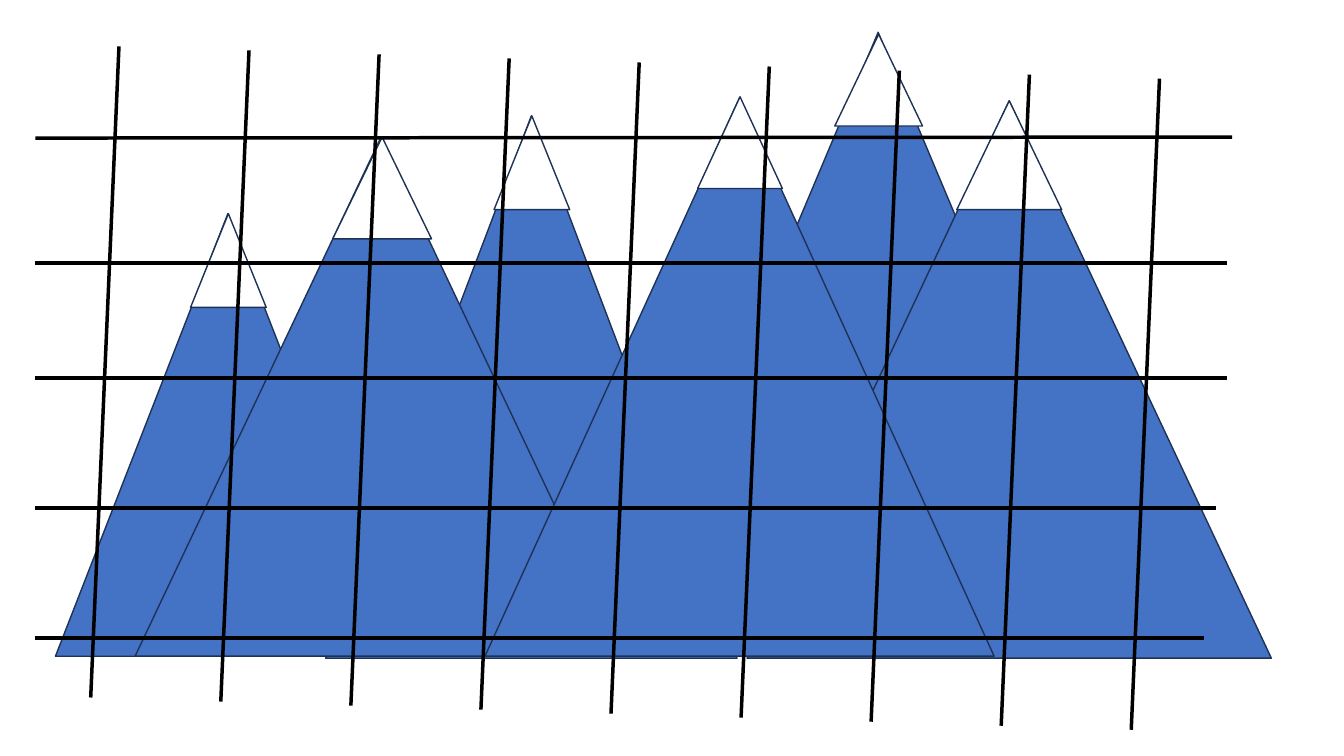
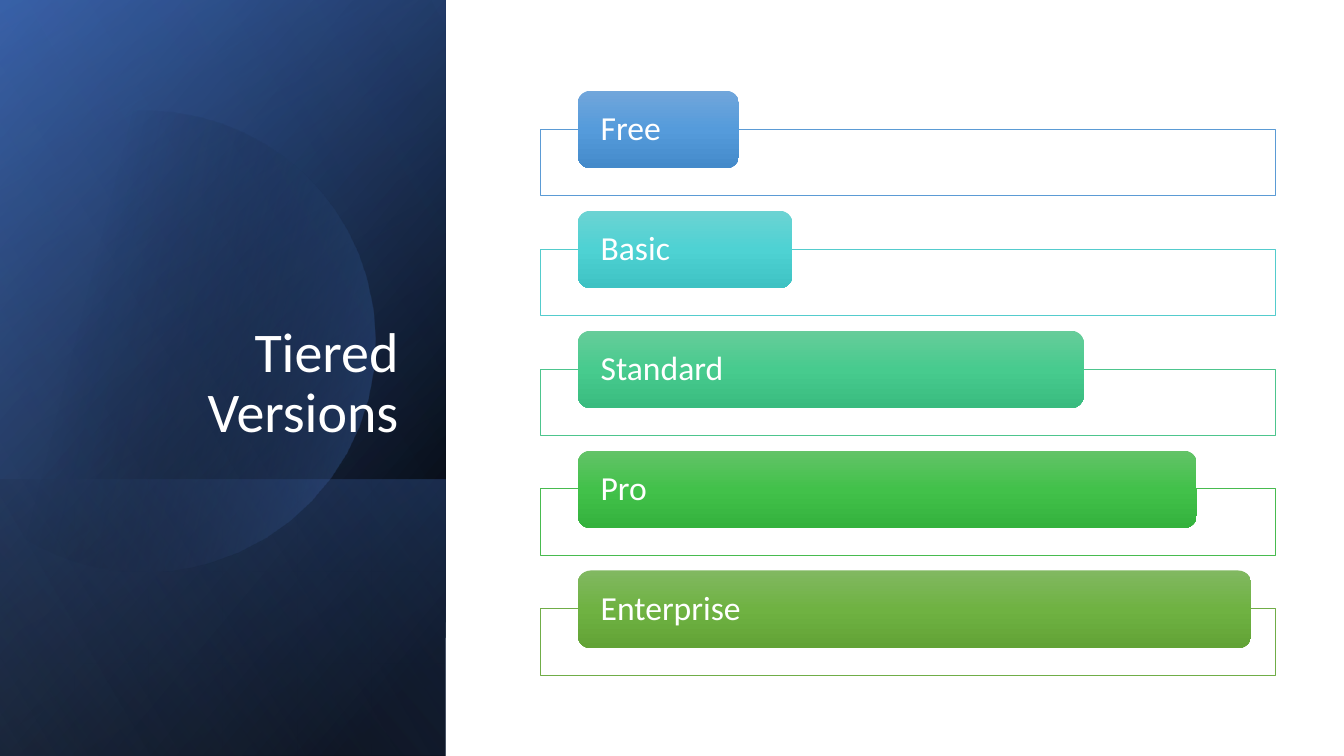
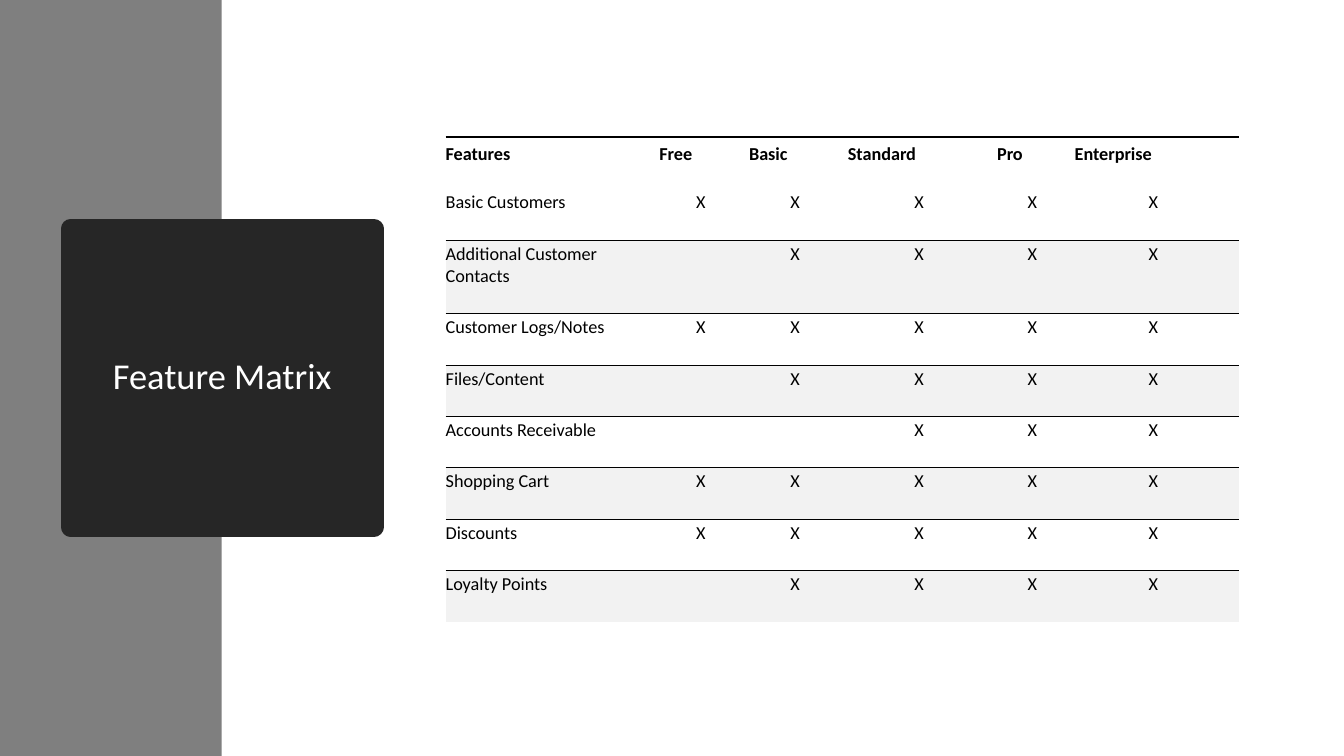
from dataclasses import dataclass
from typing import NamedTuple

from pptx import Presentation
from pptx.dml.color import RGBColor
from pptx.enum.shapes import MSO_CONNECTOR, MSO_SHAPE
from pptx.enum.text import MSO_ANCHOR, PP_ALIGN
from pptx.oxml import parse_xml
from pptx.oxml.ns import nsdecls, qn
from pptx.util import Inches, Pt

TRIANGLE = MSO_SHAPE.ISOSCELES_TRIANGLE
RECTANGLE = MSO_SHAPE.RECTANGLE
ROUNDED = MSO_SHAPE.ROUNDED_RECTANGLE
STRAIGHT = MSO_CONNECTOR.STRAIGHT
LEFT, CENTER, RIGHT = PP_ALIGN.LEFT, PP_ALIGN.CENTER, PP_ALIGN.RIGHT
TOP, MIDDLE, BOTTOM = MSO_ANCHOR.TOP, MSO_ANCHOR.MIDDLE, MSO_ANCHOR.BOTTOM
PLAIN_TABLE = "{2D5ABB26-0587-4C30-8999-92F81FD0307C}"


@dataclass(frozen=True)
class Theme:
    font: str = "Calibri"
    black: str = "000000"
    white: str = "FFFFFF"
    blue: str = "4472C4"
    deep_blue: str = "2F5597"
    pale_blue: str = "8FAADC"
    outline: str = "1E3256"
    gray: str = "7F7F7F"
    charcoal: str = "262626"
    band: str = "F2F2F2"
    title_size: float = 40
    card_title_size: float = 26
    tier_size: float = 24
    table_size: float = 13


THEME = Theme()


class Box(NamedTuple):
    left: float
    top: float
    width: float
    height: float


class Stop(NamedTuple):
    position: int
    color: str
    alpha: int = 100


class Wash(NamedTuple):
    box: Box
    stops: tuple[Stop, ...]
    angle: int


class Tier(NamedTuple):
    name: str
    width: float
    outline: str
    colors: tuple[str, str, str]


class Feature(NamedTuple):
    name: str
    included: str  # one digit per tier, 1 when included


# Content
MOUNTAINS = (
    Box(3.23, 1.15, 4.08, 5.38), Box(6.11, 0.32, 5.2, 6.18), Box(0.55, 2.12, 3.42, 4.39),
    Box(1.34, 1.37, 4.87, 5.14), Box(7.41, 1, 5.2, 5.53), Box(4.81, 0.97, 5.05, 5.54),
)
SNOW_CAPS = (
    Box(1.89, 2.12, 0.75, 0.93), Box(3.3, 1.36, 0.98, 1.01), Box(4.9, 1.15, 0.75, 0.93),
    Box(6.92, 0.96, 0.84, 0.91), Box(8.28, 0.34, 0.87, 0.91), Box(9.49, 1, 1.04, 1.08),
)
# Start height, end width and end height of each row line
GRID_ROWS = ((1.37, 12.22, 1.36), (2.61, 12.17, 2.61), (3.75, 12.17, 3.75),
             (5.04, 12.06, 5.04), (6.33, 11.94, 6.33))
GRID_COLUMNS = 9

PANEL = Box(-1.54, 1.54, 7.5, 4.42)
WASHES_BELOW = (
    Wash(PANEL, (Stop(8, THEME.black), Stop(100, THEME.deep_blue)), 50),
    Wash(PANEL, (Stop(0, THEME.black, 0), Stop(99, THEME.blue, 46)), 30),
    Wash(Box(0.84, 3.92, 2.74, 4.42),
         (Stop(2, THEME.blue, 29), Stop(100, THEME.black, 30)), 130),
)
WASH_ABOVE = Wash(PANEL, (Stop(0, THEME.black, 0), Stop(99, THEME.pale_blue, 11)), 120)
DISC_START = (1.49, 1.1)
DISC_CURVES = (
    ((2.46, 1.12), (3.35, 1.77), (3.63, 2.75)),
    ((3.98, 3.97), (3.28, 5.23), (2.07, 5.58)),
    ((1.31, 5.8), (0.53, 5.61), (-0.03, 5.14)),
    ((-0.15, 5.03), (-0.15, 1.75), (0, 1.61)),
    ((0.23, 1.42), (0.5, 1.28), (0.8, 1.19)),
    ((1.03, 1.13), (1.26, 1.1), (1.49, 1.1)),
)
DISC_EDGE = 3  # the curve that is drawn as straight lines

TIERS = (
    Tier("Free", 1.6, "5B9BD5", ("71A6DB", "559BDB", "448ACA")),
    Tier("Basic", 2.13, "54CCCD", ("6CD3D3", "4ED2D3", "3EC2C3")),
    Tier("Standard", 5.02, "4DC58D", ("67CC9A", "47CB8E", "39BB7F")),
    Tier("Pro", 6.14, "48BB4F", ("63C368", "42C14A", "34B23D")),
    Tier("Enterprise", 6.68, "70AD47", ("81B861", "6FB242", "62A336")),
)
TIER_PITCH = 1.19

FEATURES = (
    Feature("Basic Customers", "11111"),
    Feature("Additional Customer Contacts", "01111"),
    Feature("Customer Logs/Notes", "11111"),
    Feature("Files/Content", "01111"),
    Feature("Accounts Receivable", "00111"),
    Feature("Shopping Cart", "11111"),
    Feature("Discounts", "11111"),
    Feature("Loyalty Points", "01111"),
)
COLUMN_WIDTHS = (2.12, 0.89, 0.98, 1.48, 0.77, 1.63)
ROW_HEIGHT, TALL_ROW_HEIGHT, TALL_ROW = 0.51, 0.73, 2


# Drawing helpers
def rgb(color: str) -> RGBColor:
    return RGBColor.from_string(color)


def style_shape(shape, fill: str | None, line: str | None = None, width: float = 1) -> None:
    shape.shadow.inherit = False
    if fill:
        shape.fill.solid()
        shape.fill.fore_color.rgb = rgb(fill)
    else:
        shape.fill.background()
    if line:
        shape.line.color.rgb = rgb(line)
        shape.line.width = Pt(width)
    else:
        shape.line.fill.background()


def add_box(slide, kind, box: Box, fill: str | None, line: str | None = None,
            width: float = 1):
    shape = slide.shapes.add_shape(kind, *map(Inches, box))
    style_shape(shape, fill, line, width)
    return shape


def add_line(slide, start: tuple[float, float], end: tuple[float, float]) -> None:
    line = slide.shapes.add_connector(STRAIGHT, *map(Inches, start + end))
    line.line.color.rgb = rgb(THEME.black)
    line.line.width = Pt(2.5)
    line.element.spPr.append(parse_xml(f"<a:effectLst {nsdecls('a')}/>"))


def set_gradient(shape, stops: tuple[Stop, ...], angle: int) -> None:
    """Replace the empty fill of a shape with a linear gradient."""
    stop_xml = "".join(
        f'<a:gs pos="{stop.position * 1000}"><a:srgbClr val="{stop.color}">'
        f'<a:alpha val="{stop.alpha * 1000}"/></a:srgbClr></a:gs>' for stop in stops)
    gradient = parse_xml(
        f'<a:gradFill {nsdecls("a")} rotWithShape="1"><a:gsLst>{stop_xml}</a:gsLst>'
        f'<a:lin ang="{angle * 60000}" scaled="0"/></a:gradFill>')
    properties = shape.element.spPr
    properties.replace(properties.find(qn("a:noFill")), gradient)


def set_text(text_frame, text: str, size: float, color: str = THEME.white,
             align=LEFT, bold: bool = False, spacing: float = 0.9) -> None:
    text_frame.text = text
    text_frame.word_wrap = True
    paragraph = text_frame.paragraphs[0]
    paragraph.alignment = align
    paragraph.line_spacing = spacing
    font = paragraph.runs[0].font
    font.name, font.size, font.bold = THEME.font, Pt(size), bold
    font.color.rgb = rgb(color)


def set_top_border(cell, width: float) -> None:
    border = parse_xml(
        f'<a:lnT {nsdecls("a")} w="{Pt(width)}"><a:solidFill>'
        f'<a:srgbClr val="{THEME.black}"/></a:solidFill></a:lnT>')
    cell._tc.get_or_add_tcPr().insert(0, border)


def add_wash(slide, wash: Wash) -> None:
    """Add a mirrored quarter-turn rectangle with a gradient."""
    shape = add_box(slide, RECTANGLE, wash.box, None)
    shape.rotation = 90
    shape.element.spPr.find(qn("a:xfrm")).set("flipH", "1")
    set_gradient(shape, wash.stops, wash.angle)


def disc_points(steps: int = 12) -> list[tuple[float, float]]:
    """Sample the curved outline into short straight segments."""
    points = [DISC_START]
    for index, curve in enumerate(DISC_CURVES):
        if index == DISC_EDGE:
            points.extend(curve)
            continue
        controls = (points[-1], *curve)
        for step in range(1, steps + 1):
            t = step / steps
            weights = ((1 - t) ** 3, 3 * t * (1 - t) ** 2, 3 * t * t * (1 - t), t ** 3)
            points.append(tuple(
                sum(weight * point[axis] for weight, point in zip(weights, controls))
                for axis in (0, 1)))
    return points


def add_disc(slide) -> None:
    start, *others = [(Inches(x), Inches(y)) for x, y in disc_points()]
    builder = slide.shapes.build_freeform(*start)
    builder.add_line_segments(others, close=True)
    disc = builder.convert_to_shape()
    style_shape(disc, None)
    set_gradient(disc, (Stop(29, THEME.black, 0), Stop(100, THEME.blue, 43)), 14)


def add_tier(slide, tier: Tier, offset: float) -> None:
    add_box(slide, RECTANGLE, Box(5.36, 1.28 + offset, 7.29, 0.66),
            THEME.white, tier.outline, 0.5)
    bar = add_box(slide, ROUNDED, Box(5.73, 0.9 + offset, tier.width, 0.77), None)
    set_gradient(bar, tuple(map(Stop, (0, 50, 100), tier.colors)), 90)
    frame = bar.text_frame
    frame.margin_left = frame.margin_right = Inches(0.19)
    frame.margin_top = frame.margin_bottom = 0
    frame.vertical_anchor = MIDDLE
    set_text(frame, tier.name, THEME.tier_size)


# Slides
def build_mountains(slide) -> None:
    for boxes, fill in ((MOUNTAINS, THEME.blue), (SNOW_CAPS, THEME.white)):
        for box in boxes:
            add_box(slide, TRIANGLE, box, fill, THEME.outline)
    for start_y, end_x, end_y in GRID_ROWS:
        add_line(slide, (0.35, start_y), (end_x, end_y))
    for index in range(GRID_COLUMNS):
        x, y = 1.18 + 1.29 * index, 0.46 + 0.04 * index
        add_line(slide, (x, y), (x - 0.28, y + 6.46))


def build_tiers(slide) -> None:
    for wash in WASHES_BELOW:
        add_wash(slide, wash)
    add_disc(slide)
    add_wash(slide, WASH_ABOVE)
    title = slide.shapes.add_textbox(*map(Inches, Box(0.64, 1.84, 3.41, 2.62)))
    title.text_frame.vertical_anchor = BOTTOM
    set_text(title.text_frame, "Tiered Versions", THEME.title_size, align=RIGHT)
    for index, tier in enumerate(TIERS):
        add_tier(slide, tier, index * TIER_PITCH)


def build_matrix(slide) -> None:
    add_box(slide, RECTANGLE, Box(0, 0, 2.2, 7.5), THEME.gray)
    # The wide round-joined outline gives the card its soft corners
    card = add_box(slide, RECTANGLE, Box(0.7, 2.27, 3.01, 2.96),
                   THEME.charcoal, THEME.charcoal, 13.75)
    card.element.spPr.find(qn("a:ln")).append(parse_xml(f"<a:round {nsdecls('a')}/>"))
    card.text_frame.vertical_anchor = MIDDLE
    set_text(card.text_frame, "Feature Matrix", THEME.card_title_size, align=CENTER)

    rows = [("Features", *(tier.name for tier in TIERS))]
    rows += [(feature.name, *("X" if flag == "1" else "" for flag in feature.included))
             for feature in FEATURES]
    frame = slide.shapes.add_table(len(rows), len(COLUMN_WIDTHS),
                                   *map(Inches, Box(4.42, 1.36, 7.87, 4.81)))
    frame.element.xpath(".//a:tableStyleId")[0].text = PLAIN_TABLE
    table = frame.table
    table.first_row = table.horz_banding = False
    for column, width in zip(table.columns, COLUMN_WIDTHS):
        column.width = Inches(width)
    for row_index, row in enumerate(rows):
        table.rows[row_index].height = Inches(
            TALL_ROW_HEIGHT if row_index == TALL_ROW else ROW_HEIGHT)
        for column_index, text in enumerate(row):
            fill_cell(table.cell(row_index, column_index), text, row_index, column_index)


def fill_cell(cell, text: str, row: int, column: int) -> None:
    header = row == 0
    if header or row % 2:
        cell.fill.background()
    else:
        cell.fill.solid()
        cell.fill.fore_color.rgb = rgb(THEME.band)
    if row % 2 == 0:
        set_top_border(cell, 2.25 if header else 0.5)
    if not text:
        return
    cell.margin_left, cell.margin_top = Inches(0), Inches(0.03)
    cell.margin_right, cell.margin_bottom = Inches(0.07), Inches(0.2)
    cell.vertical_anchor = MIDDLE if header else TOP
    set_text(cell.text_frame, text, THEME.table_size, THEME.black,
             LEFT if header or column == 0 else CENTER, header, 1.0)


def main() -> None:
    presentation = Presentation()
    presentation.slide_width, presentation.slide_height = Inches(13.33), Inches(7.5)
    blank = presentation.slide_layouts[6]
    for build in (build_mountains, build_tiers, build_matrix):
        build(presentation.slides.add_slide(blank))
    presentation.save("out.pptx")


if __name__ == "__main__":
    main()
